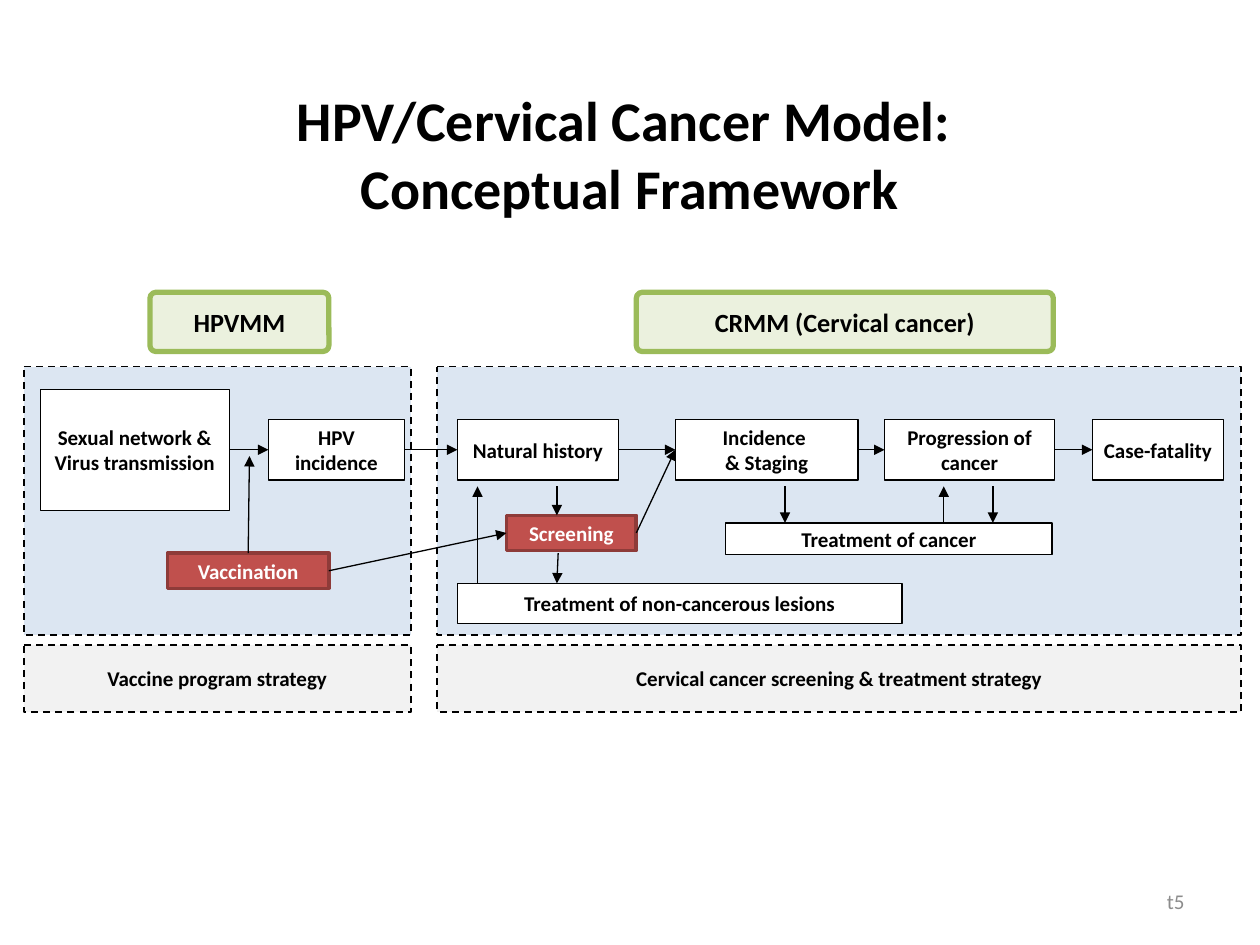
"""Build the HPV and cervical cancer conceptual framework slide."""
from itertools import pairwise

from lxml.etree import SubElement
from pptx import Presentation
from pptx.dml.color import RGBColor
from pptx.enum.dml import MSO_LINE_DASH_STYLE as Dash
from pptx.enum.shapes import MSO_CONNECTOR as Connector, MSO_SHAPE as Shape
from pptx.enum.text import MSO_ANCHOR as Anchor, MSO_AUTO_SIZE as AutoSize, PP_ALIGN as Align
from pptx.oxml.ns import qn
from pptx.util import Inches, Pt

BLACK = RGBColor(0x00, 0x00, 0x00)
WHITE = RGBColor(0xFF, 0xFF, 0xFF)
GREY = RGBColor(0x8C, 0x8C, 0x8C)
PALE_GREY = RGBColor(0xF2, 0xF2, 0xF2)
PALE_BLUE = RGBColor(0xDC, 0xE6, 0xF2)
PALE_GREEN = RGBColor(0xEB, 0xF1, 0xDE)
GREEN = RGBColor(0x9B, 0xBB, 0x59)
RED = RGBColor(0xC0, 0x50, 0x4D)
DARK_RED = RGBColor(0x8E, 0x3B, 0x39)

COLUMNS, ROWS = 100, 75
LEFT, RIGHT = 1, 3

LOOKS = {
    "panel": (Shape.FLOWCHART_PROCESS, PALE_BLUE, BLACK, 1, Dash.DASH, BLACK, 12),
    "strategy": (Shape.FLOWCHART_PROCESS, PALE_GREY, BLACK, 1, Dash.DASH, BLACK, 12),
    "state": (Shape.RECTANGLE, WHITE, BLACK, 0.75, None, BLACK, 12),
    "action": (Shape.RECTANGLE, RED, DARK_RED, 2, None, WHITE, 12),
    "model": (Shape.ROUNDED_RECTANGLE, PALE_GREEN, GREEN, 3, None, BLACK, 15),
}


def apply(target, values):
    """Set every attribute named in values."""
    for name, value in values.items():
        setattr(target, name, value)


class Diagram:
    """Hold the slide, its grid and its text style."""

    font = "Calibri"

    def __init__(self, deck):
        """Open a title-only slide and size the grid to it."""
        self.slide = deck.slides.add_slide(deck.slide_layouts[5])
        self.column = deck.slide_width / COLUMNS
        self.row = deck.slide_height / ROWS

    def place(self, *lengths):
        """Turn alternating columns and rows into slide lengths."""
        return [round(n * unit) for n, unit in zip(lengths, (self.column, self.row) * 2)]

    def letter(self, frame, text, size, colour, bold=True, align=Align.CENTER, **margins):
        """Fill a text frame and format its paragraphs."""
        frame.text = text
        apply(frame, {"word_wrap": True, "auto_size": AutoSize.NONE,
                      "vertical_anchor": Anchor.MIDDLE, **margins})
        for paragraph in frame.paragraphs:
            paragraph.alignment = align
            apply(paragraph.font, {"name": self.font, "size": Pt(size), "bold": bold})
            paragraph.font.color.rgb = colour

    def title(self, text, *area):
        """Move and fill the title placeholder."""
        title = self.slide.shapes.title
        apply(title, dict(zip(("left", "top", "width", "height"), self.place(*area))))
        self.letter(title.text_frame, text, 32, BLACK)

    def page_label(self, text, *area):
        """Add the page label at the lower right."""
        label = self.slide.shapes.add_textbox(*self.place(*area))
        self.letter(label.text_frame, text, 12, GREY, bold=False, align=Align.RIGHT)

    def box(self, look, text, *area):
        """Add a box in one of the named looks."""
        preset, fill, outline, weight, dash, colour, size = LOOKS[look]
        box = self.slide.shapes.add_shape(preset, *self.place(*area))
        box.shadow.inherit = False
        box.fill.solid()
        box.fill.fore_color.rgb = fill
        box.line.color.rgb = outline
        apply(box.line, {"width": Pt(weight), "dash_style": dash})
        if preset == Shape.ROUNDED_RECTANGLE:
            box.adjustments[0] = 0.1
        if text:
            self.letter(box.text_frame, text, size, colour,
                        margin_left=Inches(0.05), margin_right=Inches(0.05),
                        margin_top=Inches(0.02), margin_bottom=Inches(0.02))
        return box

    def arrow(self, *ends):
        """Draw an arrow between two grid points."""
        arrow = self.slide.shapes.add_connector(Connector.STRAIGHT, *self.place(*ends))
        arrow.line.color.rgb = BLACK
        arrow.line.width = Pt(0.75)
        properties = arrow._element.spPr
        SubElement(properties.find(qn("a:ln")), qn("a:tailEnd"), type="triangle")
        SubElement(properties, qn("a:effectLst"))
        return arrow

    def link(self, source, target):
        """Glue an arrow from the right of one box to the left of another."""
        arrow = self.arrow(0, 0, 0, 0)
        arrow.begin_connect(source, RIGHT)
        arrow.end_connect(target, LEFT)


def main():
    """Build and save the slide."""
    deck = Presentation()
    apply(deck, {"slide_width": Inches(10), "slide_height": Inches(7.5)})
    diagram = Diagram(deck)
    diagram.title("HPV/Cervical Cancer Model: \nConceptual Framework", 5, 7.5, 90, 9.3)

    for left, width, strategy in (
        (1.9, 30.7, "Vaccine program strategy"),
        (34.7, 63.8, "Cervical cancer screening & treatment strategy"),
    ):
        diagram.box("panel", "", left, 29.1, width, 21.3)
        diagram.box("strategy", strategy, left, 51.2, width, 5.3)

    for model, left, width in (("HPVMM", 11.9, 14.2), ("CRMM (Cervical cancer)", 50.5, 33.1)):
        diagram.box("model", model, left, 23.2, width, 4.7)

    network = diagram.box("state", "Sexual network & Virus transmission", 3.2, 30.9, 15, 9.6)
    incidence, history, staging, progression, fatality = (
        diagram.box("state", stage, left, 33.3, width, 4.8)
        for stage, left, width in (
            ("HPV incidence", 21.3, 10.8),
            ("Natural history", 36.3, 12.8),
            ("Incidence \n& Staging", 53.6, 14.5),
            ("Progression of cancer", 70.2, 13.5),
            ("Case-fatality", 86.7, 10.4),
        )
    )
    diagram.box("state", "Treatment of cancer", 57.6, 41.5, 25.9, 2.5)
    diagram.box("state", "Treatment of non-cancerous lesions", 36.3, 46.3, 35.3, 3.2)
    vaccination = diagram.box("action", "Vaccination", 13.3, 43.9, 12.8, 2.8)
    screening = diagram.box("action", "Screening", 40.2, 40.9, 10.3, 2.8)

    for chain in (
        (network, incidence, history, staging, progression, fatality),
        (vaccination, screening, staging),
    ):
        for source, target in pairwise(chain):
            diagram.link(source, target)

    for ends in (
        (19.7, 43.9, 19.8, 36.2),
        (37.9, 46.3, 37.9, 38.6),
        (44.2, 38.6, 44.2, 40.9),
        (44.3, 43.9, 44.2, 46.3),
        (62.3, 38.6, 62.3, 41.5),
        (74.9, 41.5, 74.9, 38.6),
        (78.8, 38.6, 78.8, 41.5),
    ):
        diagram.arrow(*ends)

    diagram.page_label("t5", 71.7, 69.5, 23.3, 4)
    deck.save("out.pptx")


if __name__ == "__main__":
    main()
